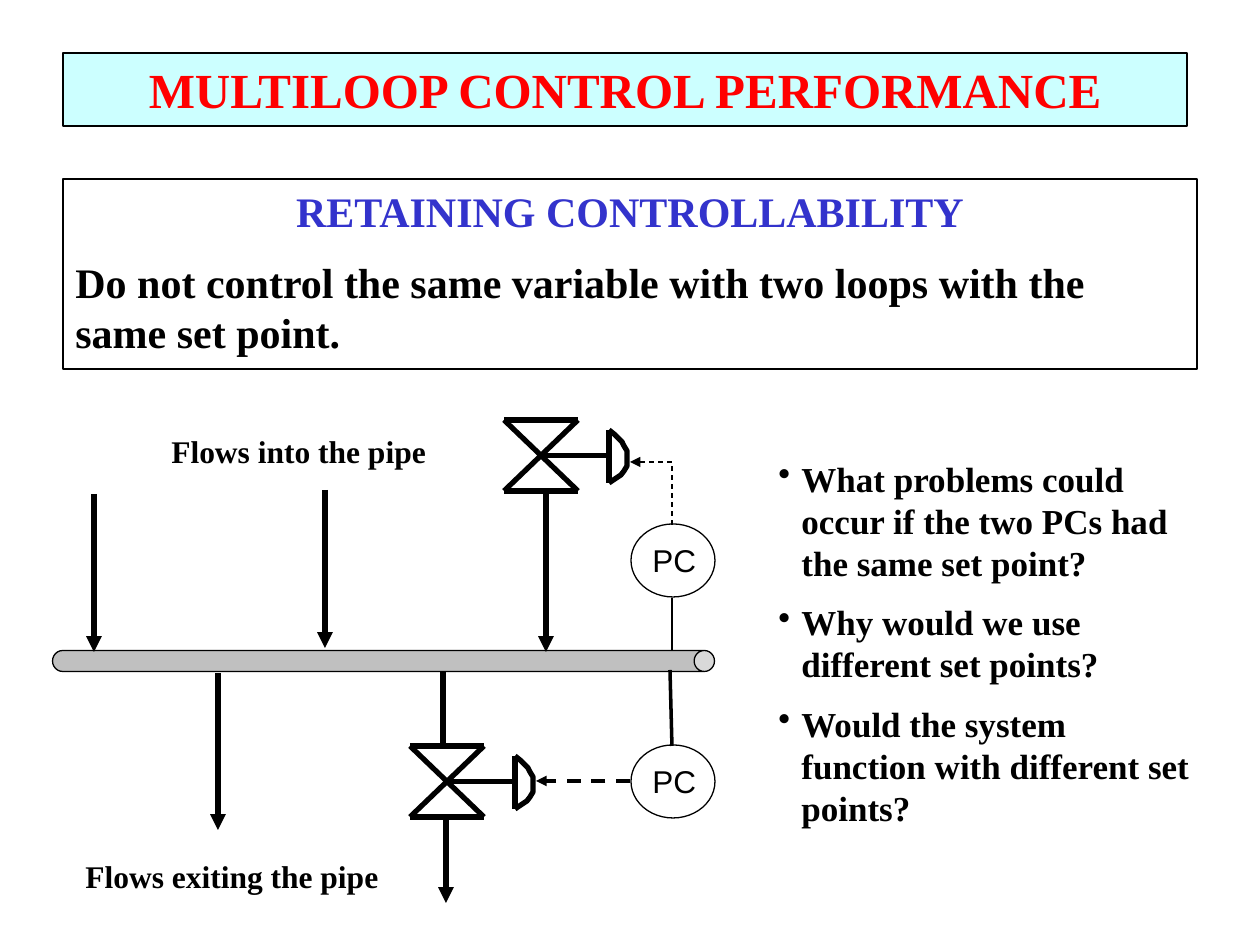
from lxml.etree import SubElement
from pptx import Presentation
from pptx.dml.color import RGBColor
from pptx.enum.dml import MSO_LINE_DASH_STYLE as Dash
from pptx.enum.shapes import MSO_CONNECTOR, MSO_SHAPE as Shape
from pptx.enum.text import MSO_ANCHOR, PP_ALIGN as Align
from pptx.oxml.ns import qn
from pptx.util import Pt

EMU_PER_PX = 914400 / 126
SERIF, SANS = "Times New Roman", "Arial"
BLACK = RGBColor(0x00, 0x00, 0x00)
RED = RGBColor(0xFF, 0x00, 0x00)
BLUE = RGBColor(0x33, 0x33, 0xCC)
PALE_CYAN = RGBColor(0xCC, 0xFF, 0xFF)
GRAY = RGBColor(0xC0, 0xC0, 0xC0)
THIN, MEDIUM, THICK = 0.75, 2, 3

TITLE = "MULTILOOP CONTROL PERFORMANCE"
RULE = [
    "RETAINING CONTROLLABILITY",
    "Do not control the same variable with two loops with the same set point.",
]
QUESTIONS = [
    "What problems could occur if the two PCs had the same set point?",
    "Why would we use different set points?",
    "Would the system function with different set points?",
]
FLOW_LABELS = [
    ("Flows into the pipe", (159, 426, 280, 50)),
    ("Flows exiting the pipe", (73, 851, 319, 50)),
]
FLOW_ARROWS = [  # x, top, bottom
    (94, 494, 652),
    (325, 490, 648),
    (546, 494, 652),
    (218, 673, 830),
    (446, 819, 903),
]
VALVES = [(504, 420), (410, 746)]
VALVE_WIDTH, VALVE_HEIGHT = 74, 71
ACTUATOR_X, ACTUATOR_Y = 105, 10
ACTUATOR_DOME = [
    (0, 0), (5, 4), (9, 8), (13, 12), (15, 16), (18, 21), (18, 26),
    (18, 32), (18, 36), (15, 41), (12, 45), (6, 49), (0, 53),
]
CONTROLLER_X, CONTROLLER_YS = 631, (524, 745)
SIGNAL_LINES = [  # start, end, width, dashed, arrow
    ((443, 746), (443, 672), THICK, False, False),
    ((672, 746), (670, 670), MEDIUM, False, False),
    ((630, 781), (536, 781), MEDIUM, True, True),
    ((672, 598), (672, 651), THIN, False, False),
    ((672, 525), (672, 462), THIN, True, False),
    ((672, 462), (630, 462), THIN, True, True),
]


def px(value):
    return round(value * EMU_PER_PX)


presentation = Presentation()
presentation.slide_width, presentation.slide_height = px(1260), px(945)
slide = presentation.slides.add_slide(presentation.slide_layouts[6])
shapes = slide.shapes


def style_outline(line, width):
    line.color.rgb = BLACK
    line.width = Pt(width)


def add_outlined(kind, box, fill=None):
    shape = shapes.add_shape(kind, *map(px, box))
    shape.shadow.inherit = False
    if fill is None:
        shape.fill.background()
    else:
        shape.fill.solid()
        shape.fill.fore_color.rgb = fill
    style_outline(shape.line, THIN)
    return shape


def add_line(start, end, width=THICK, dashed=False, arrow=False):
    connector = shapes.add_connector(
        MSO_CONNECTOR.STRAIGHT, *map(px, start + end))
    style_outline(connector.line, width)
    if dashed:
        connector.line.dash_style = Dash.DASH
    if arrow:
        SubElement(connector.line._get_or_add_ln(), qn("a:tailEnd"),
                   type="triangle")
    SubElement(connector._element.spPr, qn("a:effectLst"))


def write(shape, texts, size, font=SERIF, bold=True, colors=(BLACK,),
          alignments=(Align.LEFT,), wrap=True):
    """Write one paragraph per text; the last colour and alignment carry on."""
    frame = shape.text_frame
    frame.word_wrap = wrap
    frame.vertical_anchor = MSO_ANCHOR.TOP
    frame.text = "\n".join(texts)
    for index, paragraph in enumerate(frame.paragraphs):
        paragraph.alignment = alignments[min(index, len(alignments) - 1)]
        if index:
            paragraph.space_before = Pt(size / 2)
        for run in paragraph.runs:
            run.font.name = font
            run.font.size = Pt(size)
            run.font.bold = bold
            run.font.color.rgb = colors[min(index, len(colors) - 1)]


def add_text(box, texts, size, **style):
    text_box = shapes.add_textbox(*map(px, box))
    write(text_box, texts, size, **style)
    return text_box


def add_bullets(text_box, indent):
    for paragraph in text_box.text_frame.paragraphs:
        properties = paragraph._p.get_or_add_pPr()
        properties.set("marL", str(px(indent)))
        properties.set("indent", str(-px(indent)))
        SubElement(properties, qn("a:buChar"), char="•")


def add_valve(left, top):
    right, bottom = left + VALVE_WIDTH, top + VALVE_HEIGHT
    middle_y = top + VALVE_HEIGHT / 2
    bar_x, bar_top = left + ACTUATOR_X, top + ACTUATOR_Y
    dome = [(px(bar_x + x), px(bar_top + y)) for x, y in ACTUATOR_DOME]
    for start, end in [
        ((left, bottom), (right, bottom)),
        ((left, top), (right, top)),
        ((left, top), (right, bottom)),
        ((right, top), (left, bottom)),
        ((left + VALVE_WIDTH / 2, middle_y), (bar_x, middle_y)),
        ((bar_x, bar_top), (bar_x, bar_top + ACTUATOR_DOME[-1][1])),
    ]:
        add_line(start, end)
    builder = shapes.build_freeform(*dome[0])
    builder.add_line_segments(dome[1:], close=False)
    outline = builder.convert_to_shape()
    outline.shadow.inherit = False
    outline.fill.background()
    style_outline(outline.line, THICK)


write(add_outlined(Shape.RECTANGLE, (63, 53, 1124, 73), PALE_CYAN),
      [TITLE], 28, colors=(RED,), alignments=(Align.CENTER,))
write(add_outlined(Shape.RECTANGLE, (63, 179, 1134, 190)),
      RULE, 24, colors=(BLUE, BLACK), alignments=(Align.CENTER, Align.LEFT))

pipe = add_outlined(Shape.CAN, (373, 330, 21, 662), GRAY)
pipe.adjustments[0] = 0.97
pipe.rotation = 90

for x, top, bottom in FLOW_ARROWS:
    add_line((x, top), (x, bottom), arrow=True)
for valve in VALVES:
    add_valve(*valve)
for y in CONTROLLER_YS:
    add_outlined(Shape.OVAL, (CONTROLLER_X, y, 84, 73))
    add_text((CONTROLLER_X + 9, y + 11, 69, 50), ["PC"], 18,
             font=SANS, bold=False, wrap=False)
for signal_line in SIGNAL_LINES:
    add_line(*signal_line)
for label, box in FLOW_LABELS:
    add_text(box, [label], 18, wrap=False)
add_bullets(add_text((766, 451, 441, 391), QUESTIONS, 20), 23)

presentation.save("out.pptx")
